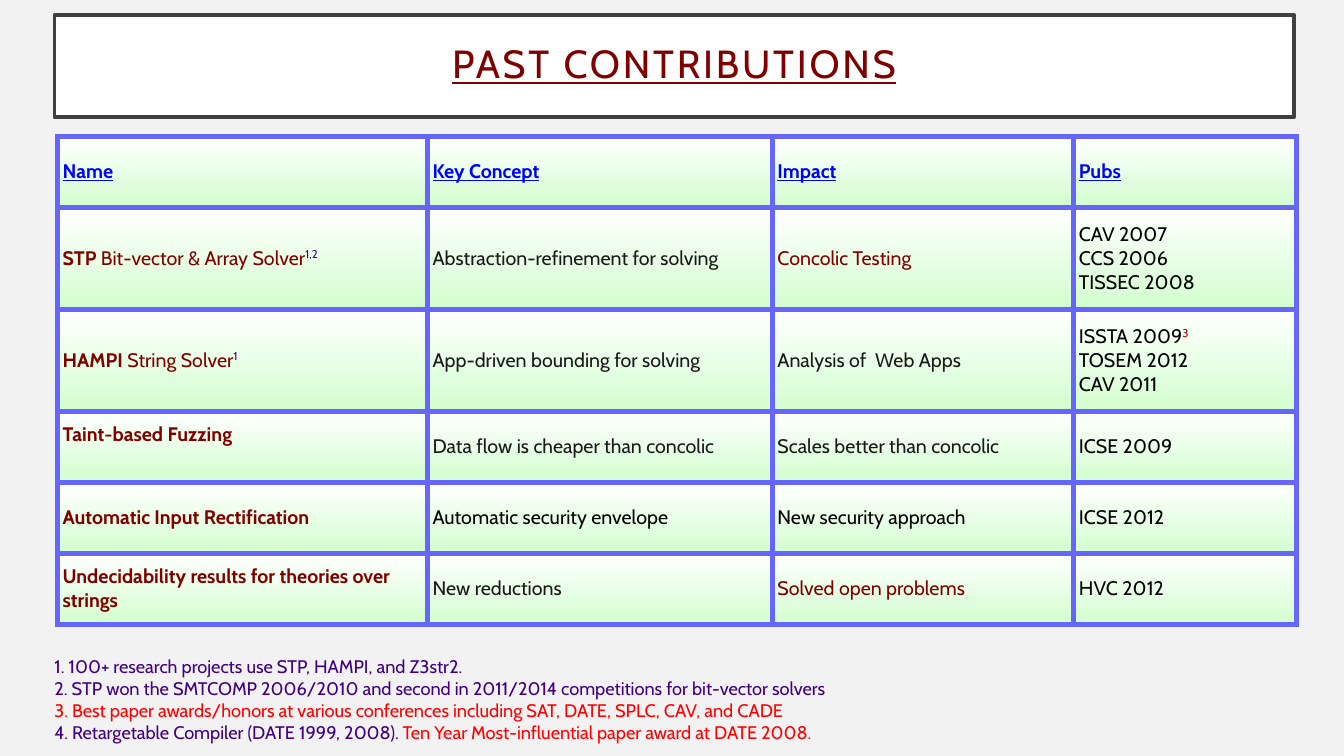
from lxml import etree
from pptx import Presentation, util as u
from pptx.dml.color import RGBColor
from pptx.enum import shapes, text
from pptx.oxml import parse_xml
from pptx.oxml.ns import nsdecls, qn

MAROON, BLACK, GREY = "800000", "000000", "191919"
PURPLE, RED, BLUE = "400080", "FF0000", "0000FF"
rgb = RGBColor.from_string

prs = Presentation()
prs.slide_width, prs.slide_height = u.Inches(13.33), u.Inches(7.5)
W, H = prs.slide_width / 100, prs.slide_height / 100


def box(left, top, width, height):
    """Turn percentages of the slide's size into lengths."""
    return int(left * W), int(top * H), int(width * W), int(height * H)


def add_run(p, txt, size=14, color=BLACK, bold=False, underline=False, **attrs):
    """Add a formatted run; attrs go to the run properties as they are."""
    r = p.add_run()
    r.text = txt
    r.font.name, r.font.size = "Cabin", u.Pt(size)
    r.font.bold, r.font.underline = bold, underline
    r.font.color.rgb = rgb(color)
    for key, value in attrs.items():
        r._r.get_or_add_rPr().set(key, str(value))


s = prs.slides.add_slide(prs.slide_layouts[6])
s.background.fill.solid()
s.background.fill.fore_color.rgb = rgb("F2F2F2")

# Title
sp = s.shapes.add_shape(shapes.MSO_SHAPE.RECTANGLE, *box(4.05, 2, 92.25, 13.5))
sp.shadow.inherit = False
sp.fill.solid()
sp.fill.fore_color.rgb = rgb("FFFFFF")
sp.line.color.rgb = rgb("404040")
sp.line.width = u.Pt(2.5)
tf = sp.text_frame
tf.vertical_anchor = text.MSO_ANCHOR.MIDDLE
p = tf.paragraphs[0]
p.alignment = text.PP_ALIGN.CENTER
p.line_spacing = 0.9
add_run(p, "PAST CONTRIBUTIONS", size=28, color=MAROON, underline=True, spc=200)

# Table: each cell is a list of paragraphs, each paragraph a list of runs
head = dict(color=BLUE, bold=True, underline=True)
name = dict(color=MAROON, bold=True)
maroon, grey, black = dict(color=MAROON), dict(color=GREY), dict(color=BLACK)
note = dict(color=PURPLE, baseline=32000)
award = dict(color="B80202", baseline=32000)
rows = [
    [[[(title, head)]] for title in ("Name", "Key Concept", "Impact", "Pubs")],
    [[[("STP ", name), ("Bit-vector & Array Solver", maroon), ("1,2", note)]],
     [[("Abstraction-refinement for solving", grey)]],
     [[("Concolic Testing", maroon)]],
     [[("CAV 2007", black)], [("CCS 2006", black)], [("TISSEC 2008", black)]]],
    [[[("HAMPI ", name), ("String Solver", maroon), ("1", note)]],
     [[("App-driven bounding for solving", grey)]],
     [[("Analysis of  Web Apps", grey)]],
     [[("ISSTA 2009", black), ("3", award)], [("TOSEM 2012", black)], [("CAV 2011", black)]]],
    [[[("Taint-based Fuzzing", name)]],
     [[("Data flow is cheaper than concolic", grey)]],
     [[("Scales better than concolic", grey)]],
     [[("ICSE 2009", black)]]],
    [[[("Automatic Input Rectification", name)]],
     [[("Automatic security envelope", black)]],
     [[("New security approach", black)]],
     [[("ICSE 2012", black)]]],
    [[[("Undecidability results for theories over strings", name)]],
     [[("New reductions", grey)]],
     [[("Solved open problems", maroon)]],
     [[("HVC 2012", black)]]],
]
widths = [27.53, 25.66, 22.43, 16.58]
heights = [9.4, 13.5, 13.5, 9.4, 9.4, 9.4]
table = s.shapes.add_table(len(rows), len(widths),
                           *box(4.28, 18, sum(widths), sum(heights))).table
table.first_row = table.horz_banding = False
for column, width in zip(table.columns, widths):
    column.width = int(width * W)
for row, height in zip(table.rows, heights):
    row.height = int(height * H)

for i, row in enumerate(rows):
    for j, paragraphs in enumerate(row):
        cell = table.cell(i, j)
        cell.vertical_anchor = text.MSO_ANCHOR.MIDDLE
        cell.margin_left = cell.margin_right = u.Inches(0.05)
        cell.margin_top = cell.margin_bottom = u.Inches(0.04)
        cell.fill.gradient()
        cell.fill.gradient_angle = 270
        for stop, color in zip(cell.fill.gradient_stops, ("FFFFFF", "D3FECF")):
            stop.color.rgb = rgb(color)
        for k, side in enumerate("LRTB"):
            cell._tc.get_or_add_tcPr().insert(k, parse_xml(
                f'<a:ln{side} {nsdecls("a")} w="{u.Pt(4)}"><a:solidFill>'
                f'<a:srgbClr val="6666FF"/></a:solidFill></a:ln{side}>'))
        for k, runs in enumerate(paragraphs):
            p = cell.text_frame.add_paragraph() if k else cell.text_frame.paragraphs[0]
            for txt, style in runs:
                add_run(p, txt, **style)

# The fuzzing label sits half a line above the middle of its row
table.cell(3, 0).margin_bottom = u.Inches(0.28)

# Numbered footnotes
footnotes = [
    [(" 100+ research projects use STP, HAMPI, and Z3str2.", PURPLE)],
    [(" STP won the SMTCOMP 2006/2010 and second in 2011/2014 competitions"
      " for bit-vector solvers", PURPLE)],
    [(" Best paper awards/honors at various conferences including"
      " SAT, DATE, SPLC, CAV, and CADE", RED)],
    [(" Retargetable Compiler (DATE 1999, 2008). ", PURPLE),
     ("Ten Year Most-influential paper award at DATE 2008.", RED)],
]
tf = s.shapes.add_textbox(*box(4.05, 86.5, 92.4, 12)).text_frame
tf.word_wrap = True
tf.vertical_anchor = text.MSO_ANCHOR.MIDDLE
tf.margin_left = tf.margin_right = tf.margin_top = tf.margin_bottom = 0
for k, runs in enumerate(footnotes):
    p = tf.add_paragraph() if k else tf.paragraphs[0]
    pPr = p._p.get_or_add_pPr()
    pPr.set("marL", "0")
    pPr.set("indent", "0")
    etree.SubElement(pPr, qn("a:buAutoNum"), type="arabicPeriod")
    for txt, color in runs:
        add_run(p, txt, size=13, color=color)

prs.save("out.pptx")
